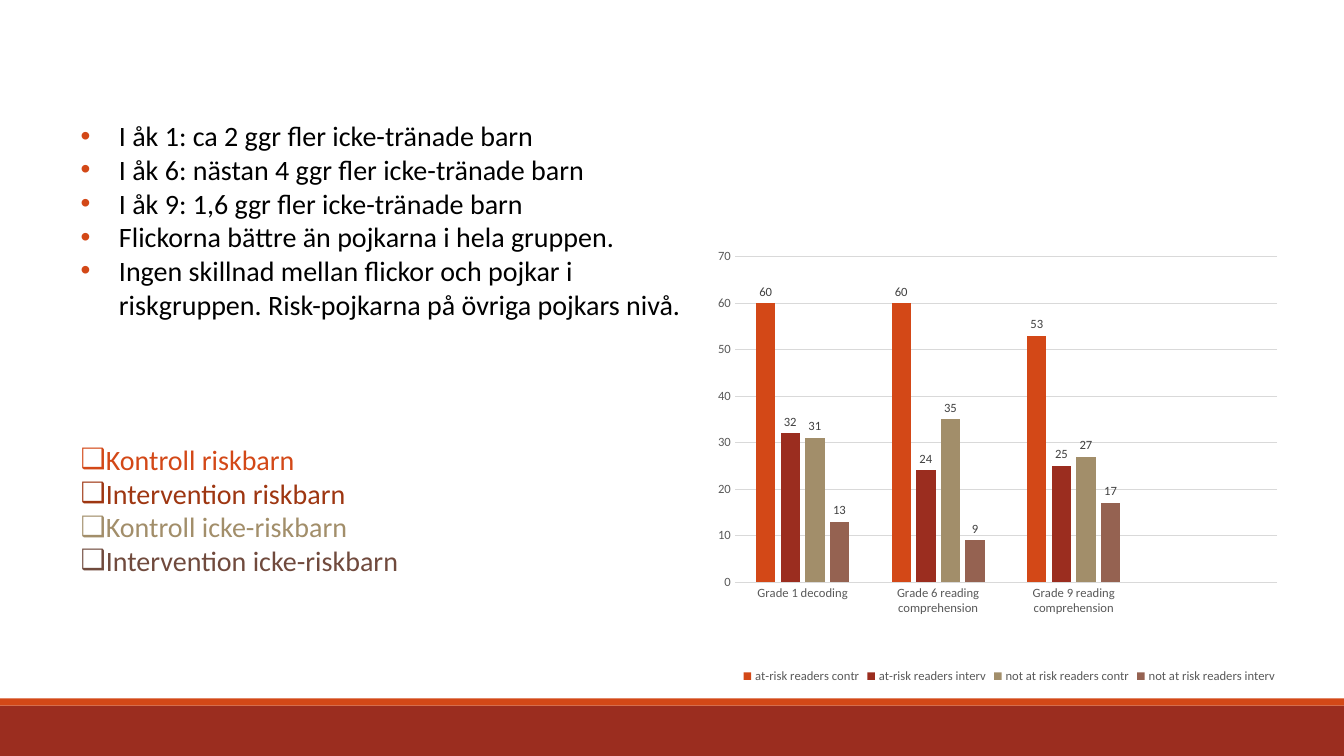
from dataclasses import dataclass

from lxml.etree import SubElement
from pptx import Presentation
from pptx.chart.data import CategoryChartData
from pptx.dml.color import RGBColor
from pptx.enum.chart import XL_CHART_TYPE as ChartType
from pptx.enum.chart import XL_LABEL_POSITION as LabelPosition
from pptx.enum.chart import XL_LEGEND_POSITION as LegendPosition
from pptx.enum.chart import XL_TICK_MARK as TickMark
from pptx.enum.shapes import MSO_SHAPE as ShapeKind
from pptx.enum.text import MSO_ANCHOR as Anchor
from pptx.enum.text import MSO_AUTO_SIZE as AutoSize
from pptx.oxml.ns import qn
from pptx.util import Inches, Pt


@dataclass(frozen=True)
class Theme:
    font: str = "Calibri"
    text: str = "000000"
    orange: str = "D34817"
    red: str = "9B2D1F"
    rust: str = "9E3611"
    sand: str = "A28E6A"
    brown: str = "956251"
    dark_brown: str = "704A3D"
    axis_text: str = "595959"
    label_text: str = "404040"
    grid: str = "D9D9D9"
    body_size: float = 20
    line_pitch: float = 24
    chart_size: float = 9
    grid_width: float = 0.75


THEME = Theme()
FINDINGS = [
    "I åk 1: ca 2 ggr fler icke-tränade barn",
    "I åk 6: nästan 4 ggr fler icke-tränade barn",
    "I åk 9: 1,6 ggr fler icke-tränade barn",
    "Flickorna bättre än pojkarna i hela gruppen.",
    "Ingen skillnad mellan flickor och pojkar i\vriskgruppen. Risk-pojkarna på övriga pojkars nivå.",
]
GROUPS = [
    ("Kontroll riskbarn", THEME.orange),
    ("Intervention riskbarn", THEME.rust),
    ("Kontroll icke-riskbarn", THEME.sand),
    ("Intervention icke-riskbarn", THEME.dark_brown),
]
GRADES = ["Grade 1 decoding", "Grade 6 reading comprehension", "Grade 9 reading comprehension", ""]
SERIES = [
    ("at-risk readers contr", (60, 60, 53, None), THEME.orange),
    ("at-risk readers interv", (32, 24, 25, None), THEME.red),
    ("not at risk readers contr", (31, 35, 27, None), THEME.sand),
    ("not at risk readers interv", (13, 9, 17, None), THEME.brown),
]
PLOT_LAYOUT = {"layoutTarget": "inner", "xMode": "edge", "yMode": "edge",
               "x": 0.09, "y": 0.14, "w": 0.81, "h": 0.65}


def apply(target, values):
    for name, value in values.items():
        setattr(target, name, value)


def place(shape, box):
    apply(shape, dict(zip(("left", "top", "width", "height"), map(Inches, box))))


class SlideBuilder:
    def __init__(self, slide, theme):
        self.slide, self.theme = slide, theme

    def style_font(self, font, size, color):
        apply(font, {"name": self.theme.font, "size": Pt(size), "bold": False})
        font.color.rgb = RGBColor.from_string(color)

    def band(self, box, color):
        shape = self.slide.shapes.add_shape(ShapeKind.RECTANGLE, *map(Inches, box))
        shape.shadow.inherit = False
        shape.fill.solid()
        shape.fill.fore_color.rgb = RGBColor.from_string(color)
        shape.line.fill.background()

    def body(self, box, findings, groups):
        body = self.slide.placeholders[1]
        place(body, box)
        frame = body.text_frame
        apply(frame, {"word_wrap": True, "auto_size": AutoSize.NONE,
                      "vertical_anchor": Anchor.TOP, "margin_top": Inches(0.38)})
        theme = self.theme
        rows = [(text, theme.text, "•", theme.orange, 0.38, 0) for text in findings]
        for position, (text, color) in enumerate(groups):
            rows.append((text, color, "❑", color, 0, 0 if position else 87))
        for position, row in enumerate(rows):
            paragraph = frame.add_paragraph() if position else frame.paragraphs[0]
            self.bullet(paragraph, *row)

    def bullet(self, paragraph, text, color, mark, mark_color, indent, space_before):
        paragraph.text = text
        apply(paragraph, {"space_before": Pt(space_before), "space_after": Pt(0),
                          "line_spacing": Pt(self.theme.line_pitch)})
        for run in paragraph.runs:
            self.style_font(run.font, self.theme.body_size, color)
        properties = paragraph._p.get_or_add_pPr()
        properties.set("marL", str(Inches(indent)))
        properties.set("indent", str(-Inches(indent)))
        bullet_color = SubElement(properties, qn("a:buClr"))
        SubElement(bullet_color, qn("a:srgbClr"), val=mark_color)
        SubElement(properties, qn("a:buChar"), char=mark)

    def style_line(self, line):
        line.color.rgb = RGBColor.from_string(self.theme.grid)
        line.width = Pt(self.theme.grid_width)

    def column_chart(self, box, categories, series_rows):
        theme = self.theme
        data = CategoryChartData()
        data.categories = categories
        for name, values, _ in series_rows:
            data.add_series(name, values)
        chart = self.slide.shapes.add_chart(
            ChartType.COLUMN_CLUSTERED, *map(Inches, box), data).chart
        apply(chart, {"has_title": False, "has_legend": True})
        self.style_font(chart.font, theme.chart_size, theme.axis_text)
        apply(chart.legend, {"position": LegendPosition.BOTTOM, "include_in_layout": False})
        self.style_font(chart.legend.font, theme.chart_size, theme.axis_text)

        for axis in (chart.category_axis, chart.value_axis):
            apply(axis, {"major_tick_mark": TickMark.NONE, "minor_tick_mark": TickMark.NONE})
            self.style_font(axis.tick_labels.font, theme.chart_size, theme.axis_text)
        self.style_line(chart.category_axis.format.line)
        apply(chart.value_axis, {"minimum_scale": 0, "maximum_scale": 70, "major_unit": 10})
        chart.value_axis.format.line.fill.background()
        self.style_line(chart.value_axis.major_gridlines.format.line)

        plot = chart.plots[0]
        apply(plot, {"gap_width": 219, "overlap": -27, "vary_by_categories": False})
        for series, (_, _, color) in zip(plot.series, series_rows):
            series.format.fill.solid()
            series.format.fill.fore_color.rgb = RGBColor.from_string(color)
            labels = series.data_labels
            apply(labels, {"show_value": True, "position": LabelPosition.OUTSIDE_END})
            self.style_font(labels.font, theme.chart_size, theme.label_text)
        self.fix_plot_area(chart)

    def fix_plot_area(self, chart):
        """Set the inner plot area as fractions of the chart."""
        area = chart._chartSpace.chart.plotArea
        for old_layout in area.findall(qn("c:layout")):
            area.remove(old_layout)
        layout = SubElement(area, qn("c:layout"))
        area.insert(0, layout)
        manual = SubElement(layout, qn("c:manualLayout"))
        for name, value in PLOT_LAYOUT.items():
            SubElement(manual, qn(f"c:{name}"), val=str(value))


def main():
    presentation = Presentation()
    apply(presentation, {"slide_width": Inches(13.33), "slide_height": Inches(7.5)})
    slide = presentation.slides.add_slide(presentation.slide_layouts[1])
    title = slide.shapes.title
    title.element.getparent().remove(title.element)

    builder = SlideBuilder(slide, THEME)
    builder.band((0, 7, 13.33, 0.5), THEME.red)
    builder.band((0, 6.93, 13.33, 0.07), THEME.orange)
    builder.body((0.7, 0.8, 11.98, 5.02), FINDINGS, GROUPS)
    builder.column_chart((6.69, 1.85, 6.64, 4.97), GRADES, SERIES)
    presentation.save("out.pptx")


if __name__ == "__main__":
    main()
